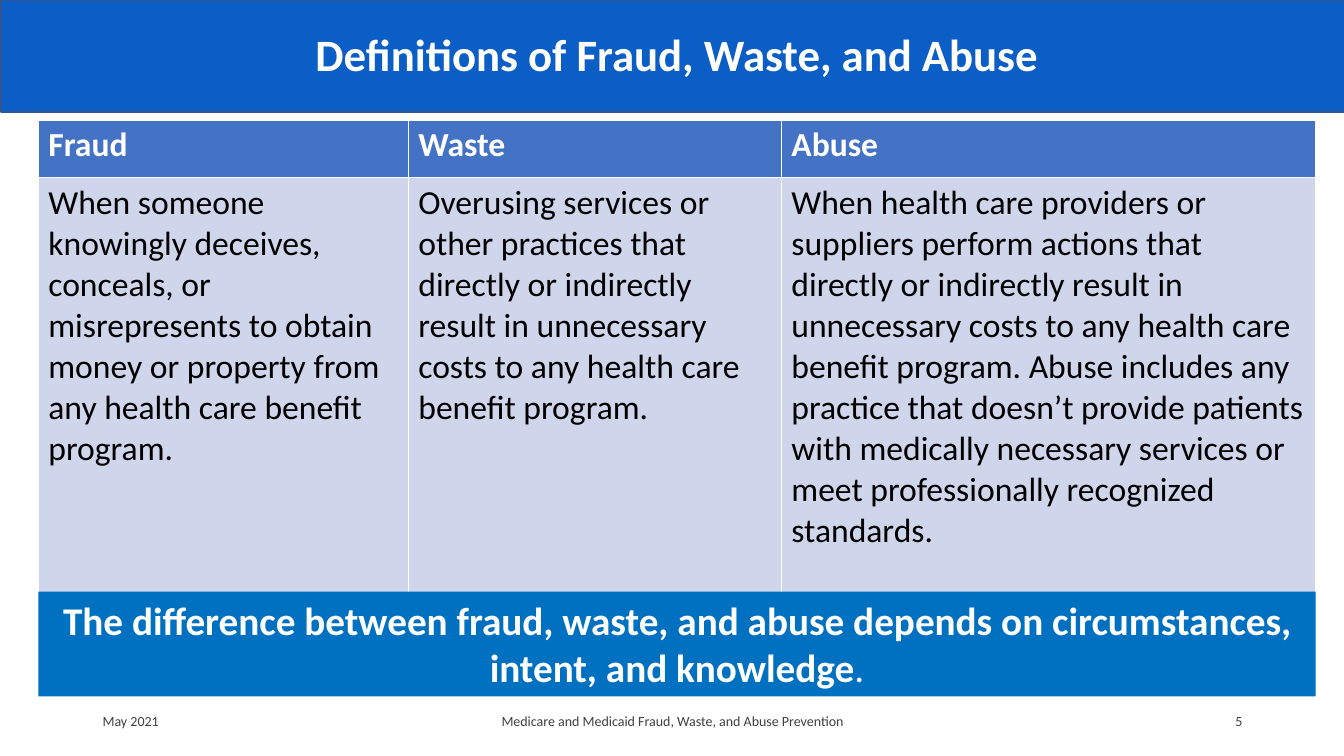
from lxml.etree import SubElement
from pptx import Presentation
from pptx.dml.color import RGBColor
from pptx.enum.shapes import MSO_SHAPE as Shape
from pptx.enum.text import MSO_ANCHOR as Anchor, PP_ALIGN as Align
from pptx.oxml.ns import qn
from pptx.util import Pt

EMU_PER_PX = 9144
WHITE, GREY, BLACK = "FFFFFF", "404040", "000000"
BANNER, BANNER_EDGE, CALLOUT = "0A5EC6", "325491", "0070C0"
HEADER, BODY = "4472C4", "CFD5EA"

DEFINITIONS = {
    "Fraud": "When someone knowingly deceives, conceals, or misrepresents to obtain "
             "money or property from any health care benefit program.",
    "Waste": "Overusing services or other practices that directly or indirectly result "
             "in unnecessary costs to any health care benefit program.",
    "Abuse": "When health care providers or suppliers perform actions that directly or "
             "indirectly result in unnecessary costs to any health care benefit program. "
             "Abuse includes any practice that doesn’t provide patients with medically "
             "necessary services or meet professionally recognized standards.",
}


def px(*lengths):
    return [length * EMU_PER_PX for length in lengths]


def color(value):
    return RGBColor.from_string(value)


class SlideBuilder:
    """Holds the text style and the current slide, and adds elements to it."""

    def __init__(self, page, font="Calibri"):
        self.page = page
        self.font = font

    def style(self, para, size, ink, bold=False, align=Align.LEFT):
        para.alignment = align
        for span in para.runs:
            span.font.name = self.font
            span.font.size = Pt(size)
            span.font.bold = bold
            span.font.color.rgb = color(ink)

    def rect(self, place, fill, edge=None):
        box = self.page.shapes.add_shape(Shape.RECTANGLE, *px(*place))
        box.shadow.inherit = False
        box.fill.solid()
        box.fill.fore_color.rgb = color(fill)
        if edge:
            box.line.color.rgb = color(edge)
            box.line.width = Pt(1)
        else:
            box.line.fill.background()
        return box

    def text(self, place, words, size, ink, bold=False, align=Align.LEFT):
        box = self.page.shapes.add_textbox(*px(*place))
        frame = box.text_frame
        frame.word_wrap = True
        frame.vertical_anchor = Anchor.MIDDLE
        frame.text = words
        self.style(frame.paragraphs[0], size, ink, bold, align)
        return frame.paragraphs[0]

    def callout(self, place, fill, words, ending, size):
        frame = self.rect(place, fill).text_frame
        frame.word_wrap = True
        frame.vertical_anchor = Anchor.TOP
        frame.text = words
        para = frame.paragraphs[0]
        para.add_run().text = ending
        self.style(para, size, WHITE, True, Align.CENTER)
        para.runs[-1].font.bold = False

    def borders(self, cell, ink):
        properties = cell._tc.get_or_add_tcPr()
        for side in ("a:lnL", "a:lnR", "a:lnT", "a:lnB"):
            line = SubElement(properties, qn(side), w=str(Pt(1)))
            fill = SubElement(line, qn("a:solidFill"))
            SubElement(fill, qn("a:srgbClr"), val=ink)

    def table(self, place, widths, heights, rows, looks, size):
        grid = self.page.shapes.add_table(len(rows), len(widths), *px(*place)).table
        for column, width in zip(grid.columns, px(*widths)):
            column.width = width
        for row, height, texts, look in zip(grid.rows, px(*heights), rows, looks):
            row.height = height
            fill, ink, bold = look
            for cell, words in zip(row.cells, texts):
                self.borders(cell, WHITE)
                cell.fill.solid()
                cell.fill.fore_color.rgb = color(fill)
                cell.text = words
                self.style(cell.text_frame.paragraphs[0], size, ink, bold)


def main():
    deck = Presentation()
    deck.slide_width, deck.slide_height = px(1333, 750)
    slide = SlideBuilder(deck.slides.add_slide(deck.slide_layouts[6]))

    slide.rect((1, 0, 1333, 111), BANNER, BANNER_EDGE)
    title = slide.text((38, 1, 1267, 112), "Definitions of Fraud, Waste, and Abuse",
                       32, WHITE, True, Align.CENTER)
    title.line_spacing = 0.9

    slide.table((38, 119, 1267, 481), (367, 370, 530), (57, 424),
                (DEFINITIONS.keys(), DEFINITIONS.values()),
                ((HEADER, WHITE, True), (BODY, BLACK, False)), 24)
    slide.callout((38, 587, 1267, 104), CALLOUT,
                  "The difference between fraud, waste, and abuse depends on "
                  "circumstances, intent, and knowledge", ".", 28)

    footers = (
        (92, 300, "May 2021", Align.LEFT),
        (442, 450, "Medicare and Medicaid Fraud, Waste, and Abuse Prevention", Align.CENTER),
        (942, 300, "5", Align.RIGHT),
    )
    for left, width, words, align in footers:
        slide.text((left, 695, width, 40), words, 10, GREY, align=align)

    deck.save("out.pptx")


if __name__ == "__main__":
    main()
